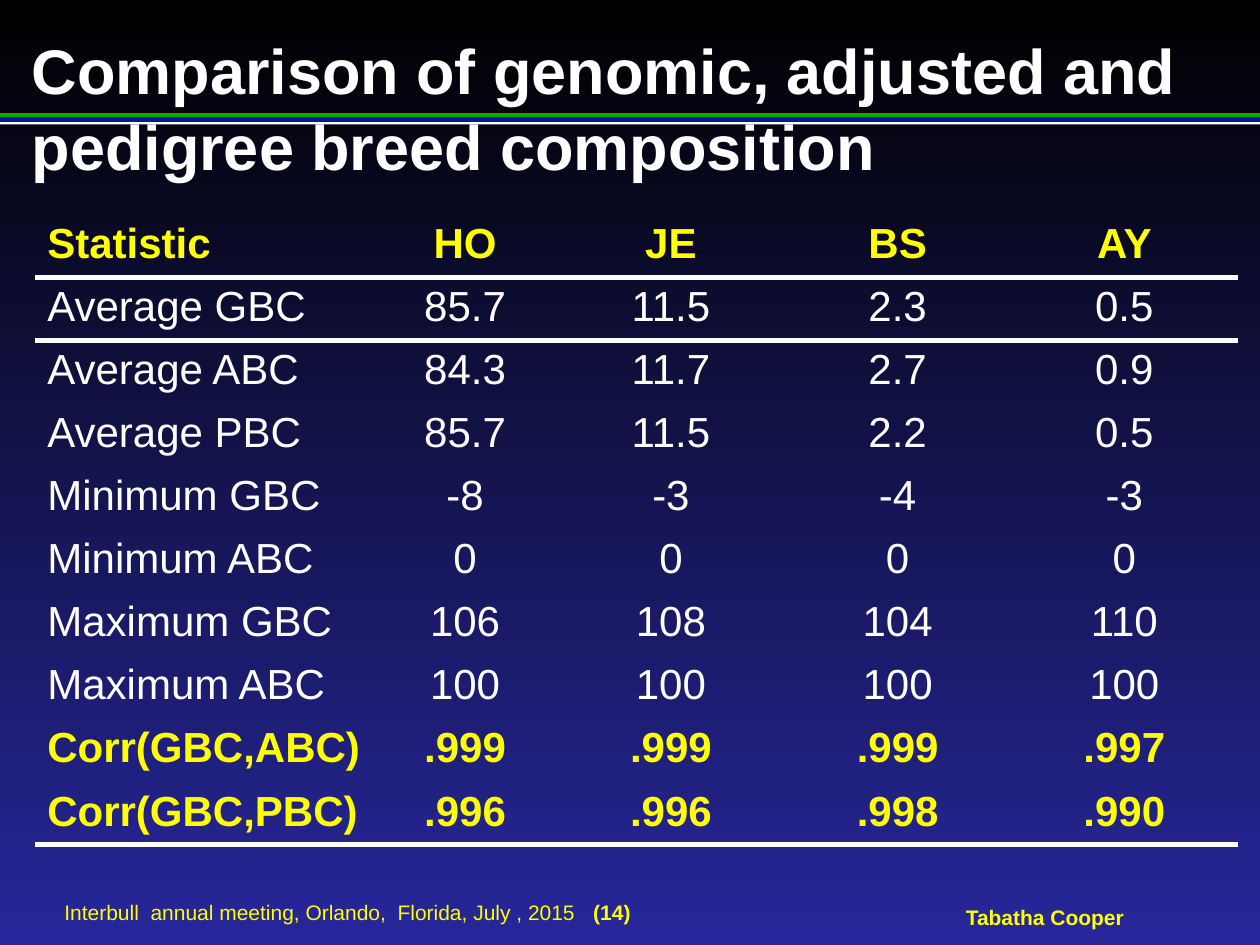
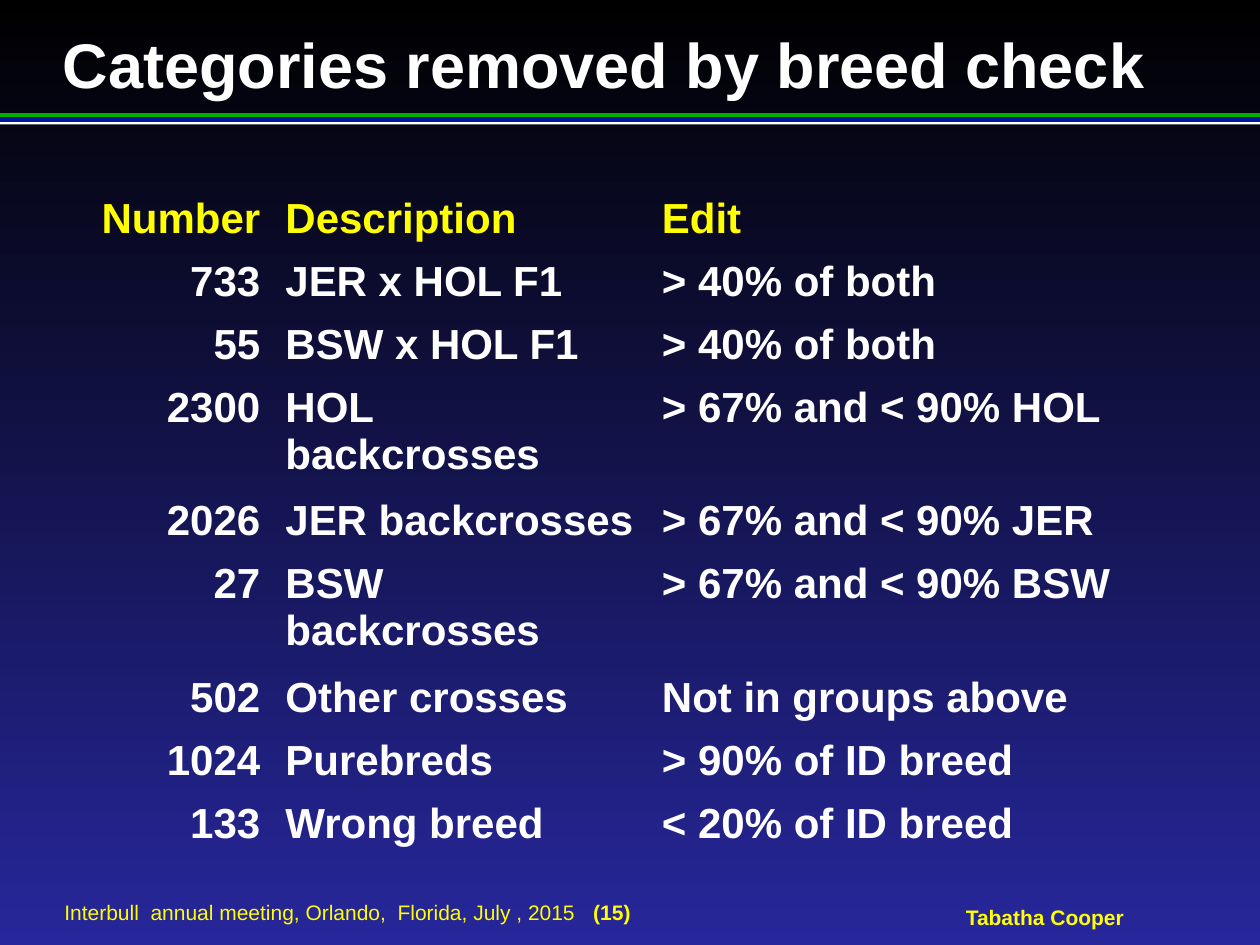
from lxml import etree
from pptx import Presentation
from pptx.dml.color import RGBColor
from pptx.enum.shapes import MSO_SHAPE as Shape
from pptx.enum.text import MSO_ANCHOR as Anchor, PP_ALIGN as Align
from pptx.oxml.ns import qn
from pptx.util import Cm, Pt

# Shared look
FONT = "Arial"
WHITE, YELLOW = "FFFFFF", "FFFF00"
TOP, BASE = "000000", "27279B"
BANDS = [("01AF00", 2.28, 0.08), ("FFFFFF", 2.44, 0.07), ("001799", 2.36, 0.1)]
WIDE, HIGH = 25.4, 19.05
ROW = 1.04
PLAIN = "{2D5ABB26-0587-4C30-8999-92F81FD0307C}"
LEFT, MID, RIGHT = Align.LEFT, Align.CENTER, Align.RIGHT

MEET = "Interbull  annual meeting, Orlando,  Florida, July , 2015"
HOST = "Tabatha Cooper"

# Slide content
STATS = [
    ("Statistic", "HO", "JE", "BS", "AY"),
    ("Average GBC", "85.7", "11.5", "2.3", "0.5"),
    ("Average ABC", "84.3", "11.7", "2.7", "0.9"),
    ("Average PBC", "85.7", "11.5", "2.2", "0.5"),
    ("Minimum GBC", "-8", "-3", "-4", "-3"),
    ("Minimum ABC", "0", "0", "0", "0"),
    ("Maximum GBC", "106", "108", "104", "110"),
    ("Maximum ABC", "100", "100", "100", "100"),
    ("Corr(GBC,ABC)", ".999", ".999", ".999", ".997"),
    ("Corr(GBC,PBC)", ".996", ".996", ".998", ".990"),
]
EDITS = [
    ("Number", "Description", "Edit"),
    ("733", "JER x HOL F1", "> 40% of both"),
    ("55", "BSW x HOL F1", "> 40% of both"),
    ("2300", "HOL backcrosses", "> 67% and < 90% HOL"),
    ("2026", "JER backcrosses", "> 67% and < 90% JER"),
    ("27", "BSW backcrosses", "> 67% and < 90% BSW"),
    ("502", "Other crosses", "Not in groups above"),
    ("1024", "Purebreds", "> 90% of ID breed"),
    ("133", "Wrong breed", "< 20% of ID breed"),
]


def rgb(code):
    return RGBColor.from_string(code)


def add_run(para, text, size, color, bold=True):
    run = para.add_run()
    run.text = text
    font = run.font
    font.name, font.size, font.bold = FONT, Pt(size), bold
    font.color.rgb = rgb(color)


def add_text(slide, box, anchor=Anchor.TOP, align=LEFT, wrap=True):
    """Add an empty box without insets and give its first paragraph."""
    frame = slide.shapes.add_textbox(*map(Cm, box)).text_frame
    frame.margin_left = frame.margin_right = 0
    frame.margin_top = frame.margin_bottom = 0
    frame.word_wrap, frame.vertical_anchor = wrap, anchor
    para = frame.paragraphs[0]
    para.alignment = align
    return para


def add_tab(para, pos):
    stops = etree.SubElement(para._p.get_or_add_pPr(), qn("a:tabLst"))
    etree.SubElement(stops, qn("a:tab"), pos=str(Cm(pos)), algn="l")


def add_band(slide, color, top, high):
    band = slide.shapes.add_shape(
        Shape.RECTANGLE, 0, Cm(top), Cm(WIDE), Cm(high))
    band.shadow.inherit = False
    band.fill.solid()
    band.fill.fore_color.rgb = rgb(color)
    band.line.fill.background()


def add_foot(slide, num):
    host = add_text(slide, (19.45, 18.23, 3.23, 0.51), Anchor.MIDDLE, MID, False)
    add_run(host, HOST, 12, YELLOW)
    meet = add_text(slide, (1.3, 18.13, 17.27, 0.51), Anchor.MIDDLE)
    add_tab(meet, 10.66)
    add_run(meet, MEET + "\t", 12, YELLOW, False)
    add_run(meet, f"({num})", 12, YELLOW)


def add_page(deck, num, title, box):
    """Add a slide with background, bands, footer and title."""
    slide = deck.slides.add_slide(deck.slide_layouts[6])
    fill = slide.background.fill
    fill.gradient()
    fill.gradient_angle = 270
    for stop, color, pos in zip(fill.gradient_stops, (TOP, BASE), (0, 1)):
        stop.color.rgb, stop.position = rgb(color), pos
    for band in BANDS:
        add_band(slide, *band)
    add_foot(slide, num)
    add_run(add_text(slide, box), title, 36, WHITE)
    return slide


def rule_cell(cell):
    """Draw a white line under a cell."""
    line = etree.SubElement(
        cell._tc.get_or_add_tcPr(), qn("a:lnB"), w=str(Pt(3)))
    fill = etree.SubElement(line, qn("a:solidFill"))
    etree.SubElement(fill, qn("a:srgbClr"), val=WHITE)


def add_grid(slide, spot, cols, data, aligns, gold, bold, rules=()):
    """Add a table; gold, bold and rules are sets of row numbers."""
    size = (sum(cols), ROW * len(data))
    frame = slide.shapes.add_table(
        len(data), len(cols), *map(Cm, spot + size))
    grid = frame.table
    grid.first_row = grid.horz_banding = False
    grid._tbl.tblPr.find(qn("a:tableStyleId")).text = PLAIN
    for col, wide in zip(grid.columns, cols):
        col.width = Cm(wide)
    for r, line in enumerate(data):
        grid.rows[r].height = Cm(ROW)
        for c, text in enumerate(line):
            cell = grid.cell(r, c)
            if r in rules:
                rule_cell(cell)
            cell.fill.background()
            para = cell.text_frame.paragraphs[0]
            para.alignment = aligns[c]
            add_run(para, text, 24, YELLOW if r in gold else WHITE, r in bold)


def main():
    deck = Presentation()
    deck.slide_width, deck.slide_height = Cm(WIDE), Cm(HIGH)

    # Breed composition statistics
    page = add_page(
        deck, 14,
        "Comparison of genomic, adjusted and pedigree breed composition",
        (0.64, 0.64, 24.13, 3.07))
    key = {0, 8, 9}
    add_grid(page, (0.7, 4.32), [6.81, 3.73] + [4.57] * 3, STATS,
             [LEFT] + [MID] * 4, key, key, {0, 1, 9})

    # Breed check categories
    page = add_page(deck, 15, "Categories removed by breed check",
                    (1.27, 0.51, 22.86, 1.52))
    add_grid(page, (1.26, 3.81), [4.24, 7.59, 11.02], EDITS,
             [RIGHT, LEFT, LEFT], {0}, range(len(EDITS)))

    deck.save("out.pptx")


if __name__ == "__main__":
    main()
